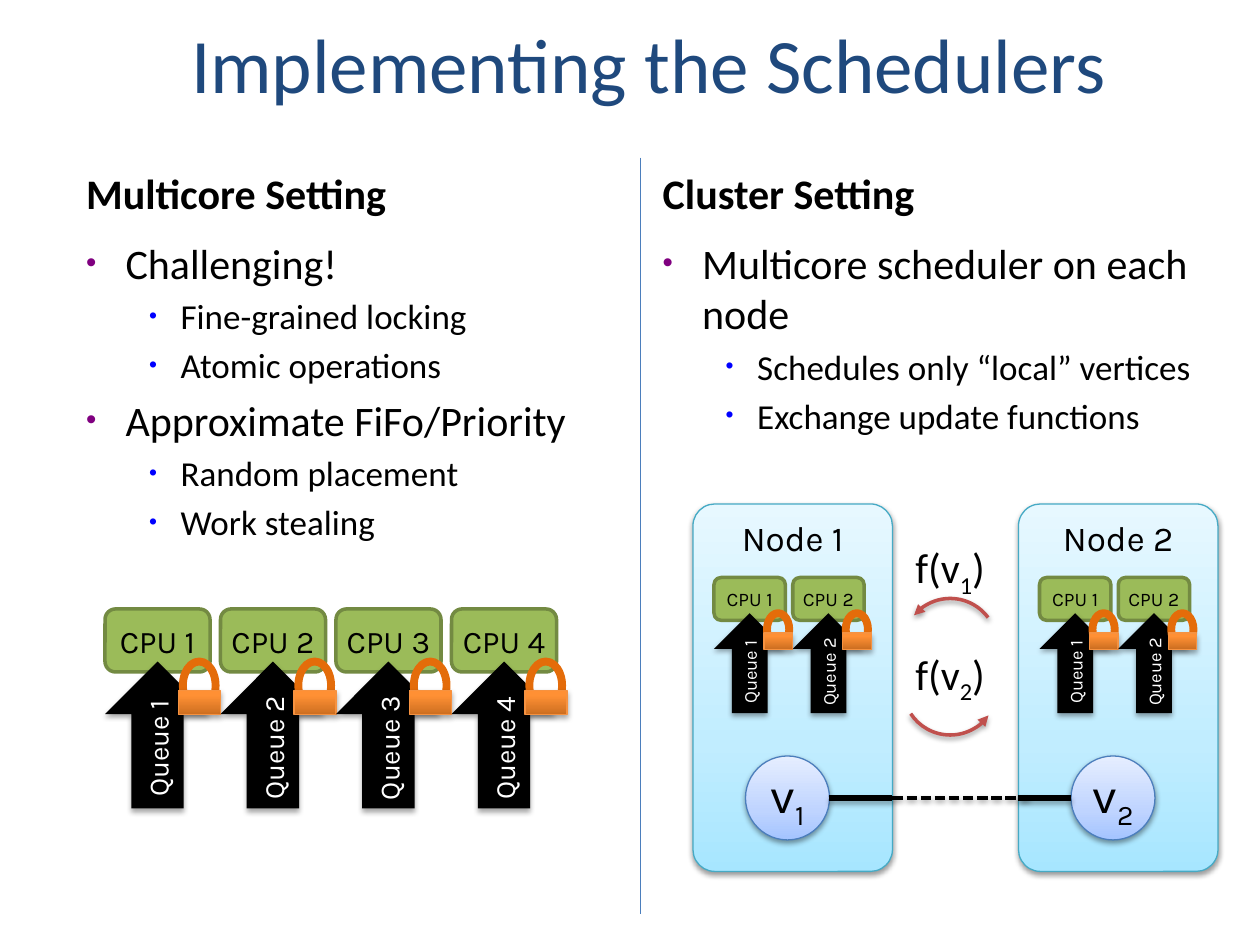
"""Build the slide on scheduler implementation for multicore and cluster settings."""
from dataclasses import dataclass
from typing import NamedTuple

from lxml import etree
from pptx import Presentation
from pptx.dml.color import RGBColor
from pptx.enum.dml import MSO_LINE
from pptx.enum.shapes import MSO_CONNECTOR, MSO_SHAPE
from pptx.enum.text import MSO_ANCHOR, MSO_AUTO_SIZE, PP_ALIGN
from pptx.oxml.ns import qn
from pptx.util import Pt

ROUNDED, RECTANGLE = MSO_SHAPE.ROUNDED_RECTANGLE, MSO_SHAPE.RECTANGLE
ARROW, OVAL, ARC = MSO_SHAPE.RIGHT_ARROW, MSO_SHAPE.OVAL, MSO_SHAPE.ARC
STRAIGHT, DASH = MSO_CONNECTOR.STRAIGHT, MSO_LINE.SQUARE_DOT
TOP, MIDDLE, BOTTOM = MSO_ANCHOR.TOP, MSO_ANCHOR.MIDDLE, MSO_ANCHOR.BOTTOM
LEFT, CENTER = PP_ALIGN.LEFT, PP_ALIGN.CENTER
NO_FIT = MSO_AUTO_SIZE.NONE


class Box(NamedTuple):
    left: float
    top: float
    width: float
    height: float


class Font(NamedTuple):
    name: str
    size: float
    color: str = "000000"
    bold: bool = False


class Outline(NamedTuple):
    color: str
    width: float


class Shadow(NamedTuple):
    opacity: int
    distance: float


class Bullet(NamedTuple):
    color: str
    percent: int
    margin: float
    hanging: float


class ProcessorStyle(NamedTuple):
    scale: float
    pitch: float
    cpu_font: Font
    queue_font: Font


class Item(NamedTuple):
    level: int
    text: str


class Column(NamedTuple):
    left: float
    heading: str
    height: float
    items: list[Item]


@dataclass(frozen=True)
class Theme:
    title: Font = Font("Calibri", 44, "1F497D")
    heading: Font = Font("Calibri", 24, bold=True)
    levels: tuple = (Font("Calibri", 24), Font("Calibri", 20))
    bullets: tuple = (Bullet("800080", 70, 22.5, 22.5), Bullet("0000FF", 65, 54, 18))
    node: Font = Font("Karla", 20)
    vertex: Font = Font("Karla", 28)
    function: Font = Font("Calibri", 24)
    large: ProcessorStyle = ProcessorStyle(1, 66, Font("Karla", 18), Font("Karla", 16, "FFFFFF"))
    small: ProcessorStyle = ProcessorStyle(
        0.68, 45, Font("Karla", 11), Font("Karla", 10.5, "FFFFFF"))
    black: str = "000000"
    cpu_fill: str = "9BBB59"
    cpu_line: Outline = Outline("738A42", 2)
    shackle: Outline = Outline("E46C0A", 4.5)
    lock_line: Outline = Outline("F69240", 0.75)
    lock_fill: tuple = ((0, "CC6E20"), (80, "FF9034"), (100, "FF9136"))
    node_line: Outline = Outline("46AAC5", 0.75)
    node_fill: tuple = ((0, "A7E6FF"), (35, "C1EDFF"), (100, "E7F8FF"))
    blue_line: Outline = Outline("4B7EBC", 0.75)
    vertex_fill: tuple = ((0, "A4C4FF"), (35, "BFD4FF"), (100, "E6EEFF"))
    edge: Outline = Outline("000000", 3)
    remote_edge: Outline = Outline("000000", 2)
    message: Outline = Outline("C0504D", 2)
    strong: Shadow = Shadow(35, 1.8)
    soft: Shadow = Shadow(38, 1.6)


THEME = Theme()
COLUMNS = [
    Column(42, "Multicore Setting", 186, [
        Item(0, "Challenging!"), Item(1, "Fine-grained locking"), Item(1, "Atomic operations"),
        Item(0, "Approximate FiFo/Priority"), Item(1, "Random placement"),
        Item(1, "Work stealing")]),
    Column(371.5, "Cluster Setting", 150, [
        Item(0, "Multicore scheduler on each node"),
        Item(1, "Schedules only “local” vertices"), Item(1, "Exchange update functions")]),
]


def add_child(parent, tag: str, **attributes):
    return etree.SubElement(parent, qn(tag), {key: str(val) for key, val in attributes.items()})


def format_runs(para, font: Font) -> None:
    for span in para.runs:
        span.font.name, span.font.size, span.font.bold = font.name, Pt(font.size), font.bold
        span.font.color.rgb = RGBColor.from_string(font.color)


def write(frame, parts: list[str], font: Font, align=CENTER, anchor=MIDDLE, wrap=False) -> None:
    """Write the parts as runs, with every second one as a subscript."""
    frame.word_wrap, frame.vertical_anchor, frame.auto_size = wrap, anchor, NO_FIT
    para = frame.paragraphs[0]
    para.alignment = align
    for index, part in enumerate(parts):
        span = para.add_run()
        span.text = part
        if index % 2:
            span.font._element.set("baseline", "-25000")
    format_runs(para, font)


def cast_shadow(properties, shadow: Shadow | None) -> None:
    effects = properties.find(qn("a:effectLst"))
    if effects is None:
        effects = add_child(properties, "a:effectLst")
    if shadow:
        outer = add_child(effects, "a:outerShdw", blurRad=Pt(3.1), dist=Pt(shadow.distance),
                          dir=5400000, rotWithShape=0)
        color = add_child(outer, "a:srgbClr", val=THEME.black)
        add_child(color, "a:alpha", val=shadow.opacity * 1000)


def set_line(line, outline: Outline) -> None:
    line.color.rgb, line.width = RGBColor.from_string(outline.color), Pt(outline.width)


def draw_shape(page, kind, box: Box, fill: str | tuple | None = None,
               outline: Outline | None = None, shadow: Shadow | None = None):
    shape = page.shapes.add_shape(kind, *map(Pt, box))
    if fill is None:
        shape.fill.background()
    elif isinstance(fill, str):
        shape.fill.solid()
        shape.fill.fore_color.rgb = RGBColor.from_string(fill)
    else:
        shape.fill.gradient()
        shape.fill.gradient_angle = 90
        stops = shape._element.spPr.find(".//" + qn("a:gsLst"))
        stops[:] = []
        for position, color in fill:
            add_child(add_child(stops, "a:gs", pos=position * 1000), "a:srgbClr", val=color)
    if outline:
        set_line(shape.line, outline)
    else:
        shape.line.fill.background()
    shape.shadow.inherit = False
    cast_shadow(shape._element.spPr, shadow)
    return shape


def draw_line(page, start: tuple, end: tuple, outline: Outline,
              shadow: Shadow | None = None, dash=None) -> None:
    line = page.shapes.add_connector(STRAIGHT, *map(Pt, start + end))
    set_line(line.line, outline)
    line.line.dash_style = dash
    cast_shadow(line._element.spPr, shadow)


def draw_processors(page, left: float, top: float, count: int, style: ProcessorStyle) -> None:
    """Draw a row of CPUs, each fed by a locked queue."""
    for index in range(count):
        def place(x: float, y: float, width: float, height: float) -> Box:
            return Box(left + index * style.pitch + x * style.scale, top + y * style.scale,
                       width * style.scale, height * style.scale)

        cpu = draw_shape(page, ROUNDED, place(0, 0, 60, 36), THEME.cpu_fill, THEME.cpu_line)
        write(cpu.text_frame, [f"CPU {index + 1}"], style.cpu_font)
        queue = draw_shape(page, ARROW, place(-12, 42, 84, 60), THEME.black, shadow=THEME.strong)
        queue.rotation = 270
        write(queue.text_frame, [f"Queue {index + 1}"], style.queue_font)
        draw_shape(page, OVAL, place(44.5, 30, 18.7, 27.4), outline=THEME.shackle)
        draw_shape(page, RECTANGLE, place(42, 46.7, 24, 13.7), THEME.lock_fill,
                   THEME.lock_line, THEME.strong)


def draw_node(page, left: float, number: int) -> None:
    node = draw_shape(page, ROUNDED, Box(left, 288, 114, 210), THEME.node_fill,
                      THEME.node_line, THEME.soft)
    node.adjustments[0] = 0.11
    write(node.text_frame, [f"Node {number}"], THEME.node, anchor=TOP)
    draw_processors(page, left + 12, 330, 2, THEME.small)
    vertex = draw_shape(page, OVAL, Box(left + 30, 432, 48, 48), THEME.vertex_fill,
                        THEME.blue_line, THEME.soft)
    write(vertex.text_frame, ["v", str(number)], THEME.vertex)


def draw_message(page, number: int, text_top: float, arc_top: float, angles: tuple) -> None:
    label = page.shapes.add_textbox(*map(Pt, (516, text_top, 55.5, 36)))
    write(label.text_frame, ["f(v", str(number), ")"], THEME.function, LEFT, TOP)
    arc = draw_shape(page, ARC, Box(516, arc_top, 54, 54), None, THEME.message, THEME.soft)
    for index, angle in enumerate(angles):
        arc.adjustments[index] = angle * 0.6
    add_child(arc.line._get_or_add_ln(), "a:headEnd", type="triangle")


def move(holder, box: Box):
    holder.left, holder.top, holder.width, holder.height = map(Pt, box)
    return holder.text_frame


def fill_list(frame, items: list[Item]) -> None:
    frame.text = "\n".join(item.text for item in items)
    frame.auto_size, frame.vertical_anchor = NO_FIT, TOP
    for para, item in zip(frame.paragraphs, items):
        para.level = item.level
        bullet = THEME.bullets[item.level]
        properties = para._p.get_or_add_pPr()
        properties.set("marL", str(Pt(bullet.margin)))
        properties.set("indent", str(-Pt(bullet.hanging)))
        add_child(add_child(properties, "a:buClr"), "a:srgbClr", val=bullet.color)
        add_child(properties, "a:buSzPct", val=bullet.percent * 1000)
        add_child(properties, "a:buChar", char="•")
        format_runs(para, THEME.levels[item.level])


def main() -> None:
    deck = Presentation()
    deck.slide_width, deck.slide_height = Pt(720), Pt(540)
    page = deck.slides.add_slide(deck.slide_layouts[4])
    title, *holders = page.placeholders
    write(move(title, Box(102, 6, 582, 60)), ["Implementing the Schedulers"],
          THEME.title, LEFT, BOTTOM, True)
    for column, heading, body in zip(COLUMNS, holders[::2], holders[1::2]):
        write(move(heading, Box(column.left, 78, 318, 50)), [column.heading],
              THEME.heading, LEFT, BOTTOM, True)
        fill_list(move(body, Box(column.left, 132, 318, column.height)), column.items)
    draw_line(page, (366, 90), (366, 522), THEME.blue_line)
    draw_processors(page, 60, 348, 4, THEME.large)
    for number, left in enumerate((396, 582), 1):
        draw_node(page, left, number)
    for start, end in ((474, 510), (582, 612)):
        draw_line(page, (start, 456), (end, 456), THEME.edge, THEME.strong)
    draw_line(page, (510, 456), (588, 456), THEME.remote_edge, THEME.soft, DASH)
    draw_message(page, 1, 306, 342, (220.1, 323.4))
    draw_message(page, 2, 367, 366, (35.85, 146.75))
    deck.save("out.pptx")


if __name__ == "__main__":
    main()
